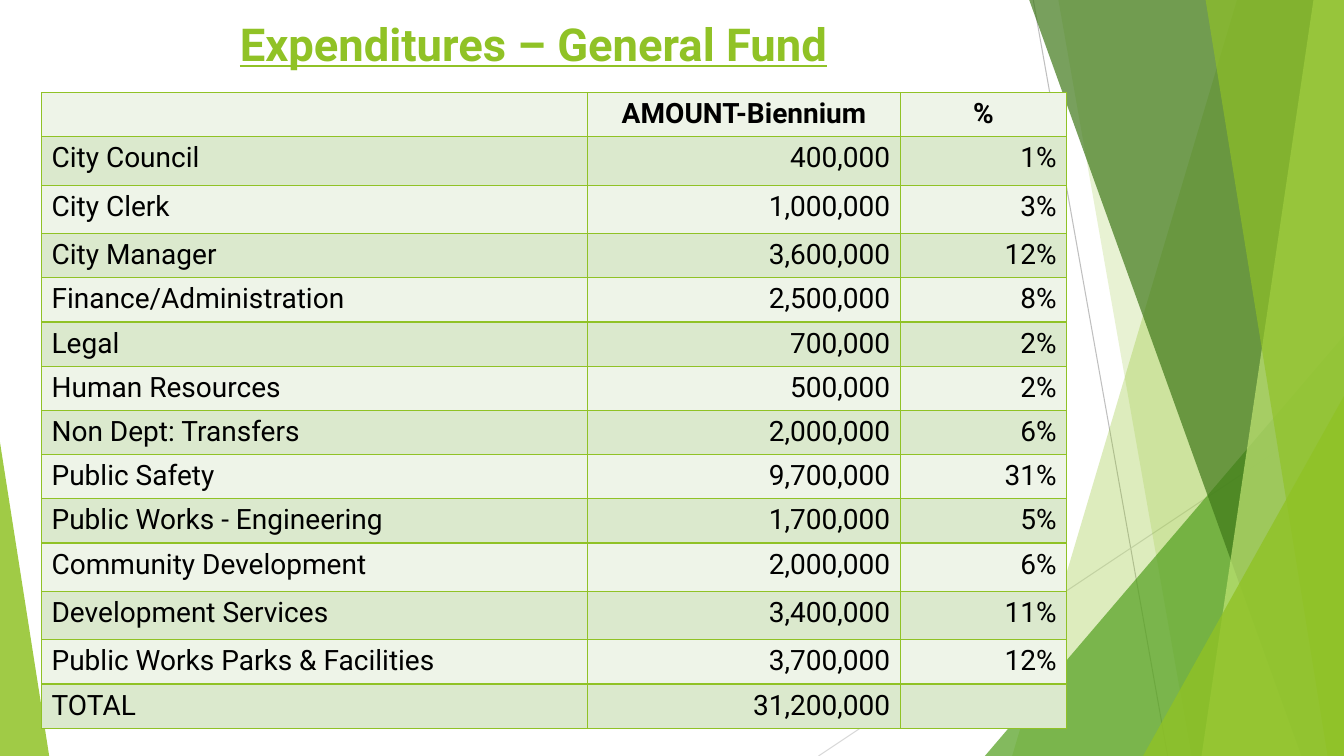
from dataclasses import dataclass

from lxml.etree import SubElement
from pptx import Presentation
from pptx.dml.color import RGBColor
from pptx.enum.shapes import MSO_CONNECTOR, MSO_SHAPE
from pptx.enum.text import MSO_ANCHOR, PP_ALIGN
from pptx.oxml.ns import qn
from pptx.shapes.autoshape import Shape
from pptx.slide import Slide
from pptx.table import _Cell
from pptx.text.text import TextFrame
from pptx.util import Inches, Length, Pt

SLIDE_WIDTH, SLIDE_HEIGHT = Inches(13.33), Inches(7.5)


@dataclass(frozen=True)
class Theme:
    font: str = "Roboto"
    title_size: float = 32.4
    body_size: float = 20
    hairline: float = 0.75
    border: float = 1
    text: str = "000000"
    lime: str = "90C226"
    pale_lime: str = "C0E474"
    green: str = "54A021"
    forest: str = "3F7819"
    grey: str = "BFBFBF"
    light_grey: str = "D9D9D9"
    bands: tuple[str, str] = ("EEF4E8", "DBE9CD")


THEME = Theme()


# All positions and sizes are percentages of the slide's width and height.
@dataclass(frozen=True)
class Ray:
    start: tuple[float, float]
    end: tuple[float, float]
    color: str


@dataclass(frozen=True)
class Facet:
    """A full-height panel reaching the right edge, with a slanted left side."""
    top: float
    bottom: float
    color: str
    opacity: int


@dataclass(frozen=True)
class Corner:
    """A right triangle standing on the bottom edge; apex is 0 left, 1 right."""
    left: float
    top: float
    width: float
    apex: int
    color: str
    opacity: int


@dataclass(frozen=True)
class Expenditure:
    department: str
    amount: str
    share: str
    height: float = 5.85


RAYS = (
    Ray((76.88, 0), (86.88, 100), THEME.grey),
    Ray((100, 53.73), (60.9, 100), THEME.light_grey),
)
BACKDROP = (
    Facet(92.04, 75.31, THEME.lime, 30),
    Facet(78.75, 88.65, THEME.lime, 20),
    Corner(73.28, 44.4, 26.72, 1, THEME.green, 72),
    Facet(76.58, 96.83, THEME.forest, 70),
    Facet(97.73, 89.4, THEME.pale_lime, 70),
    Facet(89.7, 98.78, THEME.lime, 65),
    Corner(85.05, 52.4, 14.95, 1, THEME.lime, 80),
    Corner(0, 58.53, 3.66, 0, THEME.lime, 85),
)
TALL = 6.4
EXPENDITURES = (
    Expenditure("", "AMOUNT-Biennium", "%"),
    Expenditure("City Council", "400,000", "1%", TALL),
    Expenditure("City Clerk", "1,000,000", "3%", TALL),
    Expenditure("City Manager", "3,600,000", "12%"),
    Expenditure("Finance/Administration", "2,500,000", "8%"),
    Expenditure("Legal", "700,000", "2%"),
    Expenditure("Human Resources", "500,000", "2%"),
    Expenditure("Non Dept: Transfers", "2,000,000", "6%"),
    Expenditure("Public Safety", "9,700,000", "31%"),
    Expenditure("Public Works - Engineering", "1,700,000", "5%"),
    Expenditure("Community Development", "2,000,000", "6%", TALL),
    Expenditure("Development Services", "3,400,000", "11%", TALL),
    Expenditure("Public Works Parks & Facilities", "3,700,000", "12%"),
    Expenditure("TOTAL", "31,200,000", ""),
)
COLUMN_WIDTHS = (40.65, 23.25, 12.38)


def across(percent: float) -> Length:
    return Length(round(SLIDE_WIDTH * percent / 100))


def down(percent: float) -> Length:
    return Length(round(SLIDE_HEIGHT * percent / 100))


def draw_ray(slide: Slide, ray: Ray) -> None:
    (x1, y1), (x2, y2) = ray.start, ray.end
    line = slide.shapes.add_connector(
        MSO_CONNECTOR.STRAIGHT, across(x1), down(y1), across(x2), down(y2))
    line.line.color.rgb = RGBColor.from_string(ray.color)
    line.line.width = Pt(THEME.hairline)
    SubElement(line._element.spPr, qn("a:effectLst"))


def outline_facet(slide: Slide, facet: Facet) -> Shape:
    builder = slide.shapes.build_freeform(across(facet.top), 0)
    builder.add_line_segments([
        (across(100), 0), (across(100), down(100)), (across(facet.bottom), down(100))])
    return builder.convert_to_shape()


def outline_corner(slide: Slide, corner: Corner) -> Shape:
    triangle = slide.shapes.add_shape(
        MSO_SHAPE.ISOSCELES_TRIANGLE, across(corner.left), down(corner.top),
        across(corner.width), down(100 - corner.top))
    triangle.adjustments[0] = corner.apex
    return triangle


def draw_panel(slide: Slide, panel: Facet | Corner) -> None:
    outline = outline_facet if isinstance(panel, Facet) else outline_corner
    shape = outline(slide, panel)
    shape.shadow.inherit = False
    shape.line.fill.background()
    shape.fill.solid()
    shape.fill.fore_color.rgb = RGBColor.from_string(panel.color)
    color = shape._element.spPr.find(f"{qn('a:solidFill')}/{qn('a:srgbClr')}")
    SubElement(color, qn("a:alpha"), val=str(panel.opacity * 1000))


def write(frame: TextFrame, text: str, align: PP_ALIGN, size: float, color: str,
          bold: bool, underline: bool = False) -> None:
    frame.text = text
    paragraph = frame.paragraphs[0]
    paragraph.alignment = align
    for run in paragraph.runs:
        run.font.name = THEME.font
        run.font.size = Pt(size)
        run.font.bold = bold
        run.font.underline = underline
        run.font.color.rgb = RGBColor.from_string(color)


def draw_title(slide: Slide) -> None:
    title = slide.shapes.add_textbox(across(1.9), down(1.2), across(75.6), down(8.8))
    title.text_frame.word_wrap = True
    title.text_frame.vertical_anchor = MSO_ANCHOR.BOTTOM
    write(title.text_frame, "Expenditures – General Fund", PP_ALIGN.CENTER,
          THEME.title_size, THEME.lime, bold=True, underline=True)


def style_cell(cell: _Cell, band: str) -> None:
    """Border the cell first, since the schema puts borders before the fill."""
    properties = cell._tc.get_or_add_tcPr()
    for side in ("a:lnL", "a:lnR", "a:lnT", "a:lnB"):
        border = SubElement(properties, qn(side), w=str(Pt(THEME.border)))
        SubElement(SubElement(border, qn("a:solidFill")), qn("a:srgbClr"), val=THEME.lime)
    cell.fill.solid()
    cell.fill.fore_color.rgb = RGBColor.from_string(band)


def draw_expenditures(slide: Slide) -> None:
    table = slide.shapes.add_table(
        len(EXPENDITURES), len(COLUMN_WIDTHS), across(3.09), down(12.25),
        across(sum(COLUMN_WIDTHS)), down(sum(e.height for e in EXPENDITURES))).table
    table.first_row = table.horz_banding = False
    for column, width in zip(table.columns, COLUMN_WIDTHS):
        column.width = across(width)
    for index, expenditure in enumerate(EXPENDITURES):
        table.rows[index].height = down(expenditure.height)
        is_header = index == 0
        values = (expenditure.department, expenditure.amount, expenditure.share)
        for position, value in enumerate(values):
            cell = table.cell(index, position)
            style_cell(cell, THEME.bands[index % 2])
            align = PP_ALIGN.RIGHT if position else PP_ALIGN.LEFT
            write(cell.text_frame, value, PP_ALIGN.CENTER if is_header else align,
                  THEME.body_size, THEME.text, bold=is_header)


def main() -> None:
    presentation = Presentation()
    presentation.slide_width, presentation.slide_height = SLIDE_WIDTH, SLIDE_HEIGHT
    slide = presentation.slides.add_slide(presentation.slide_layouts[6])
    for ray in RAYS:
        draw_ray(slide, ray)
    for panel in BACKDROP:
        draw_panel(slide, panel)
    draw_title(slide)
    draw_expenditures(slide)
    presentation.save("out.pptx")


if __name__ == "__main__":
    main()
